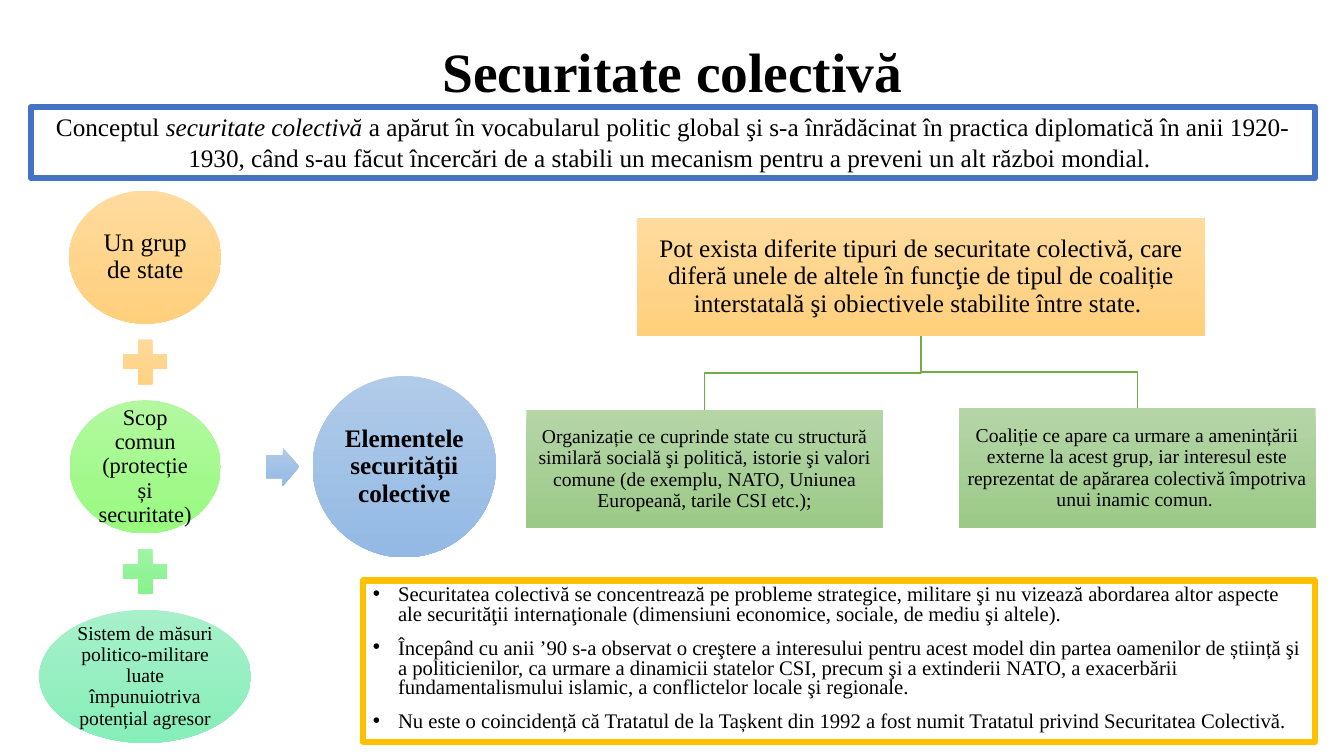
import pptx
import pptx.util
import pptx.dml.color
import pptx.enum.shapes
import pptx.enum.text
import pptx.oxml.ns
import lxml.etree

Inches = pptx.util.Inches
Pt = pptx.util.Pt
Kind = pptx.enum.shapes.MSO_SHAPE
Align = pptx.enum.text.PP_ALIGN
Anchor = pptx.enum.text.MSO_ANCHOR

COLORS = {"black": "000000", "white": "FFFFFF", "blue": "4472C4",
          "gold": "FFC000", "green": "70AD47"}
# Top and bottom colour of each gradient
FADES = {"orange": ("FFDB9E", "FFD07C"), "lime": ("B3F8A1", "98FA7E"),
         "mint": ("A4F4A9", "82F388"), "aqua": ("A8F0CA", "86EEB9"),
         "sky": ("B1CBE9", "93B9E4"), "leaf": ("B5D5A7", "9CC987")}
FONT = "Times New Roman"


def rgb(name):
    return pptx.dml.color.RGBColor.from_string(COLORS.get(name, name))


def style(para, size, bold=False, align=Align.CENTER, lead=0.9):
    para.alignment = align
    para.line_spacing = lead
    font = para.font
    font.name, font.size, font.bold = FONT, Pt(size), bold
    font.color.rgb = rgb("black")


def inset(frame, side, top):
    frame.word_wrap = True
    frame.margin_left = frame.margin_right = Inches(side)
    frame.margin_top = frame.margin_bottom = Inches(top)


def add_shape(slide, kind, box):
    shape = slide.shapes.add_shape(kind, *map(Inches, box))
    shape.shadow.inherit = False
    return shape


def add_node(slide, kind, box, fade, text="", size=18, bold=False, pad=0.02):
    """Gradient shape with centred text."""
    node = add_shape(slide, kind, box)
    node.line.fill.background()
    node.fill.gradient()
    node.fill.gradient_angle = 270
    for stop, tone in zip(node.fill.gradient_stops, FADES[fade]):
        stop.color.rgb = rgb(tone)
    if text:
        frame = node.text_frame
        inset(frame, pad, pad)
        frame.vertical_anchor = Anchor.MIDDLE
        frame.text = text
        style(frame.paragraphs[0], size, bold)
    return node


def add_frame(slide, box, color):
    """White box with a thick outline."""
    shape = add_shape(slide, Kind.RECTANGLE, box)
    shape.fill.solid()
    shape.fill.fore_color.rgb = rgb("white")
    shape.line.color.rgb = rgb(color)
    shape.line.width = Pt(4.5)
    frame = shape.text_frame
    inset(frame, 0.1, 0.05)
    frame.vertical_anchor = Anchor.TOP
    return frame


def add_title(slide, box):
    frame = slide.shapes.add_textbox(*map(Inches, box)).text_frame
    inset(frame, 0.1, 0.05)
    frame.vertical_anchor = Anchor.MIDDLE
    frame.text = "Securitate colectivă"
    style(frame.paragraphs[0], 39.6, True)


def add_intro(slide, box):
    para = add_frame(slide, box, "blue").paragraphs[0]
    style(para, 18, lead=1.0)
    para.add_run().text = "Conceptul "
    term = para.add_run()
    term.text = "securitate colectivă "
    term.font.italic = True
    para.add_run().text = (
        "a apărut în vocabularul politic global şi s-a înrădăcinat în practica "
        "diplomatică în anii 1920-1930, când s-au făcut încercări de a stabili "
        "un mecanism pentru a preveni un alt război mondial. ")


def add_sum(slide, box):
    """Three ellipses joined by plus signs, leading to a circle."""
    left, top, width, height = box
    mid = left + 1.05
    tall, step, sign = 1.32, 2.08, 0.6
    parts = [
        ("Un grup de state", 18, 1.51, "orange", "orange"),
        ("Scop comun (protecție și securitate)", 16, 1.5, "lime", "mint"),
        ("Sistem de măsuri politico-militare luate împunuiotriva "
         "potențial agresor", 14, 2.1, "aqua", None)]
    for i, (text, size, wide, fade, plus) in enumerate(parts):
        y = top + i * step
        add_node(slide, Kind.OVAL, (mid - wide / 2, y, wide, tall),
                 fade, text, size)
        if plus:
            gap = y + (tall + step - sign) / 2
            add_node(slide, Kind.MATH_PLUS,
                     (mid - sign / 2, gap, sign, sign), plus)
    # Arrow and result
    axis = top + height / 2
    arrow = add_node(slide, Kind.RIGHT_ARROW,
                     (left + 2.25, axis - 0.19, 0.33, 0.38), "sky")
    arrow.adjustments[0] = 0.6
    add_node(slide, Kind.OVAL, (left + width - 1.82, axis - 0.9, 1.82, 1.8),
             "sky", "Elementele securității colective", 18, True, 0.03)


def add_tree(slide, box):
    """Root box with two branches."""
    left, top, width, height = box
    wide, root = 3.54, 5.63
    mid = left + width / 2
    base = top + 1.17
    leaves = [
        (left, 1.17, "Organizație ce cuprinde state cu structură similară "
         "socială şi politică, istorie şi valori comune (de exemplu, NATO, "
         "Uniunea Europeană, tarile CSI etc.);"),
        (left + width - wide, 1.19, "Coaliție ce apare ca urmare a amenințării "
         "externe la acest grup, iar interesul este reprezentat de apărarea "
         "colectivă împotriva unui inamic comun. ")]
    for x, tall, text in leaves:
        y = top + height - tall
        end, bend = x + wide / 2, (base + y) / 2
        path = [(mid, base), (mid, bend), (end, bend), (end, y)]
        points = [(Inches(a), Inches(b)) for a, b in path]
        pen = slide.shapes.build_freeform(*points[0], scale=1.0)
        pen.add_line_segments(points[1:], close=False)
        link = pen.convert_to_shape()
        link.shadow.inherit = False
        link.fill.background()
        link.line.color.rgb = rgb("green")
        link.line.width = Pt(1)
        add_node(slide, Kind.RECTANGLE, (x, y, wide, tall), "leaf", text, 14,
                 pad=0.01)
    add_node(slide, Kind.RECTANGLE, (mid - root / 2, top, root, 1.17), "orange",
             "Pot exista diferite tipuri de securitate colectivă, care diferă "
             "unele de altele în funcţie de tipul de coaliție interstatală şi "
             "obiectivele stabilite între state. ", pad=0.01)


def add_notes(slide, box):
    frame = add_frame(slide, box, "gold")
    notes = [
        "Securitatea colectivă se concentrează pe probleme strategice, militare "
        "şi nu vizează abordarea altor aspecte ale securităţii internaţionale "
        "(dimensiuni economice, sociale, de mediu şi altele).",
        "Începând cu anii ’90 s-a observat o creştere a interesului pentru acest "
        "model din partea oamenilor de știință şi a politicienilor, ca urmare a "
        "dinamicii statelor CSI, precum şi a extinderii NATO, a exacerbării "
        "fundamentalismului islamic, a conflictelor locale şi regionale.",
        "Nu este o coincidență că Tratatul de la Tașkent din 1992 a fost numit "
        "Tratatul privind Securitatea Colectivă."]
    frame.text = "\n".join(notes)
    for para in frame.paragraphs:
        # Bullet with hanging indent
        props = para._p.get_or_add_pPr()
        props.set("marL", str(Inches(0.25)))
        props.set("indent", str(-Inches(0.25)))
        for tag, key, value in (("a:buFont", "typeface", "Arial"),
                                ("a:buChar", "char", "•")):
            mark = lxml.etree.SubElement(props, pptx.oxml.ns.qn(tag))
            mark.set(key, value)
        style(para, 14.8, align=Align.LEFT, lead=0.8)
        para.space_before = Pt(10)


def main():
    deck = pptx.Presentation()
    deck.slide_width, deck.slide_height = Inches(13.33), Inches(7.5)
    slide = deck.slides.add_slide(deck.slide_layouts[6])
    add_title(slide, (0.92, 0.4, 11.5, 0.67))
    add_notes(slide, (3.6, 5.76, 9.44, 1.6))
    add_intro(slide, (0.31, 1.06, 12.73, 0.71))
    add_sum(slide, (0.39, 1.89, 4.53, 5.48))
    add_tree(slide, (5.22, 2.16, 7.83, 3.08))
    deck.save("out.pptx")


if __name__ == "__main__":
    main()
